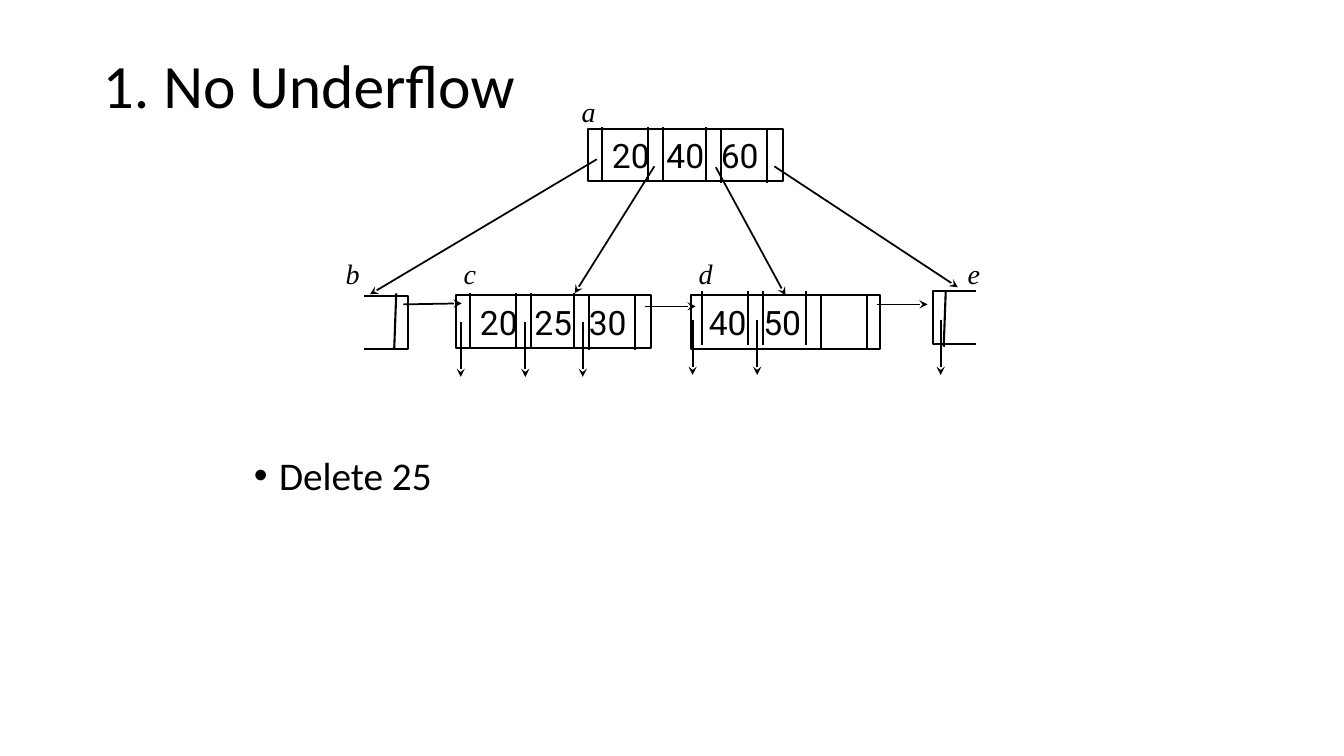
from lxml.etree import SubElement
from pptx import Presentation
from pptx.dml.color import RGBColor
from pptx.enum.shapes import MSO_CONNECTOR, MSO_SHAPE
from pptx.enum.text import MSO_ANCHOR, MSO_AUTO_SIZE, PP_ALIGN
from pptx.oxml.ns import qn
from pptx.util import Inches, Pt

BLACK = RGBColor(0, 0, 0)
OUTLINE, ARROW = 1.5, 1.25
NODE_HEIGHT = 0.52
KEY_PITCH = 0.54
TITLE_FONT = {"name": "Calibri", "size": Pt(44)}
BODY_FONT = {"name": "Calibri", "size": Pt(28)}
KEY_FONT = {"name": "Roboto", "size": Pt(24)}
LABEL_FONT = {"name": "Times New Roman", "size": Pt(20), "italic": True}


def apply_format(target, values):
    """Set each named attribute of the target."""
    for name, value in values.items():
        setattr(target, name, value)


def write_text(shape, text, font, frame_format, paragraph_format):
    """Write one formatted paragraph into a shape and return it."""
    frame = shape.text_frame
    apply_format(frame, frame_format)
    paragraph = frame.paragraphs[0]
    apply_format(paragraph, paragraph_format)
    run = paragraph.add_run()
    run.text = text
    apply_format(run.font, font)
    run.font.color.rgb = BLACK
    return paragraph


def add_text(slide, box, text, font, frame_format, paragraph_format):
    """Add a text box and return its paragraph."""
    textbox = slide.shapes.add_textbox(*map(Inches, box))
    return write_text(textbox, text, font, frame_format, paragraph_format)


def set_outline(shape):
    """Leave only a plain black outline on a shape."""
    shape.shadow.inherit = False
    shape.fill.background()
    shape.line.color.rgb = BLACK
    shape.line.width = Pt(OUTLINE)


def add_line(slide, start, end, width=OUTLINE):
    """Add a straight black line."""
    line = slide.shapes.add_connector(
        MSO_CONNECTOR.STRAIGHT, *map(Inches, (*start, *end)))
    line.line.color.rgb = BLACK
    line.line.width = Pt(width)
    SubElement(line._element.spPr, qn("a:effectLst"))
    return line


def add_arrow(slide, start, end):
    """Add a line with a stealth arrowhead at its end."""
    arrow = add_line(slide, start, end, ARROW)
    SubElement(arrow.line._get_or_add_ln(), qn("a:tailEnd"), type="stealth")
    return arrow


def add_record_pointer(slide, x, top):
    """Add the arrow from a leaf slot down to its record."""
    add_arrow(slide, (x, top), (x, top + 0.55))


def add_label(slide, name, left, top):
    """Add the italic name of a node."""
    add_text(slide, (left, top, 0.34, 0.43), name, LABEL_FONT,
             {"word_wrap": False, "auto_size": MSO_AUTO_SIZE.SHAPE_TO_FIT_TEXT}, {})


def add_node(slide, box, keys, shift=(0, 0), key_inset=0.24):
    """Draw a node with its keys and slot dividers."""
    left, top, width, height = box
    node = slide.shapes.add_shape(MSO_SHAPE.RECTANGLE, *map(Inches, box))
    set_outline(node)
    paragraph = write_text(
        node, "\t".join(keys), KEY_FONT,
        {"word_wrap": True, "vertical_anchor": MSO_ANCHOR.MIDDLE,
         "margin_left": Inches(key_inset), "margin_right": 0},
        {"alignment": PP_ALIGN.LEFT})
    tabs = SubElement(paragraph._p.get_or_add_pPr(), qn("a:tabLst"))
    for column in range(1, len(keys)):
        SubElement(tabs, qn("a:tab"), pos=str(Inches(KEY_PITCH * column)), algn="l")
    x, y = left + shift[0], top + shift[1]
    for offset in (0.14, 0.6, 0.75, 1.17):
        add_line(slide, (x + offset, y - 0.02), (x + offset, y + 0.51))
    for offset in (1.32, 1.78):
        add_line(slide, (x + offset, y + 0.01), (x + offset, y + 0.54))
    return node


def add_leaf(slide, box, keys, shift=(0, 0), key_inset=0.24):
    """Draw a leaf node with record pointers and a sibling pointer."""
    leaf = add_node(slide, box, keys, shift, key_inset)
    x, y = box[0] + shift[0], box[1] + shift[1]
    for offset in (0.05, 0.69, 1.26)[:len(keys)]:
        add_record_pointer(slide, x + offset, y + 0.26)
    add_arrow(slide, (x + 1.88, y + 0.11), (x + 2.38, y + 0.11))
    return leaf


def add_cut_leaf(slide, open_x, closed_x, top, divider):
    """Draw a leaf that is open on its outer side."""
    bottom = top + NODE_HEIGHT
    corners = [(open_x, top), (closed_x, top), (closed_x, bottom), (open_x, bottom)]
    start, *rest = [tuple(map(Inches, corner)) for corner in corners]
    builder = slide.shapes.build_freeform(*start)
    builder.add_line_segments(rest, close=False)
    set_outline(builder.convert_to_shape())
    add_line(slide, *divider)


def add_tree(slide, left, top):
    """Draw the B+ tree inside the region starting at left, top."""
    def at(x, y):
        return left + x, top + y

    add_node(slide, (*at(2.5, 0.39), 1.94, NODE_HEIGHT), ["20", "40", "60"])
    add_leaf(slide, (*at(1.19, 2.04), 1.94, NODE_HEIGHT), ["20", "25", "30"])
    leaf_d = add_leaf(slide, (*at(3.52, 2.04), 1.88, 0.53), ["40", "50"],
                      (-0.03, -0.02), 0.18)
    add_cut_leaf(slide, left + 0.28, left + 0.72, top + 2.05,
                 (at(0.6, 2.02), at(0.58, 2.57)))
    add_cut_leaf(slide, left + 6.35, left + 5.92, top + 2,
                 (at(6.03, 2.55), at(6.05, 2)))
    add_record_pointer(slide, *at(6, 2.28))
    add_arrow(slide, at(0.67, 2.13), at(1.25, 2.12))

    for start, end in (((2.59, 0.69), (0.34, 2.03)), ((3.16, 0.76), (2.37, 2.02)),
                       ((4.35, 0.76), (6.17, 1.96))):
        add_arrow(slide, at(*start), at(*end))
    add_arrow(slide, at(3.77, 0.77), at(4.46, 2.04)).end_connect(leaf_d, 0)

    add_label(slide, "a", *at(2.34, 0))
    for name, x in (("b", 0), ("c", 1.17), ("d", 3.5), ("e", 6.17)):
        add_label(slide, name, *at(x, 1.61))


def add_title(slide, box):
    """Add the slide title."""
    add_text(slide, box, "1. No Underflow", TITLE_FONT,
             {"word_wrap": True, "vertical_anchor": MSO_ANCHOR.MIDDLE},
             {"line_spacing": 0.9})


def add_body(slide, box):
    """Add the bulleted operation."""
    paragraph = add_text(slide, box, "Delete 25", BODY_FONT, {"word_wrap": True},
                         {"line_spacing": 0.8, "space_before": Pt(10)})
    properties = paragraph._p.get_or_add_pPr()
    properties.set("marL", str(Inches(0.25)))
    properties.set("indent", str(Inches(-0.25)))
    SubElement(properties, qn("a:buFont"), typeface="Arial")
    SubElement(properties, qn("a:buChar"), char="•")


def main():
    """Build and save the slide."""
    deck = Presentation()
    apply_format(deck, {"slide_width": Inches(13.33), "slide_height": Inches(7.5)})
    slide = deck.slides.add_slide(deck.slide_layouts[6])
    add_body(slide, (2.42, 4.52, 8.5, 2.15))
    add_tree(slide, 3.33, 0.89)
    add_title(slide, (0.92, 0.33, 11.5, 1.09))
    deck.save("out.pptx")


if __name__ == "__main__":
    main()
